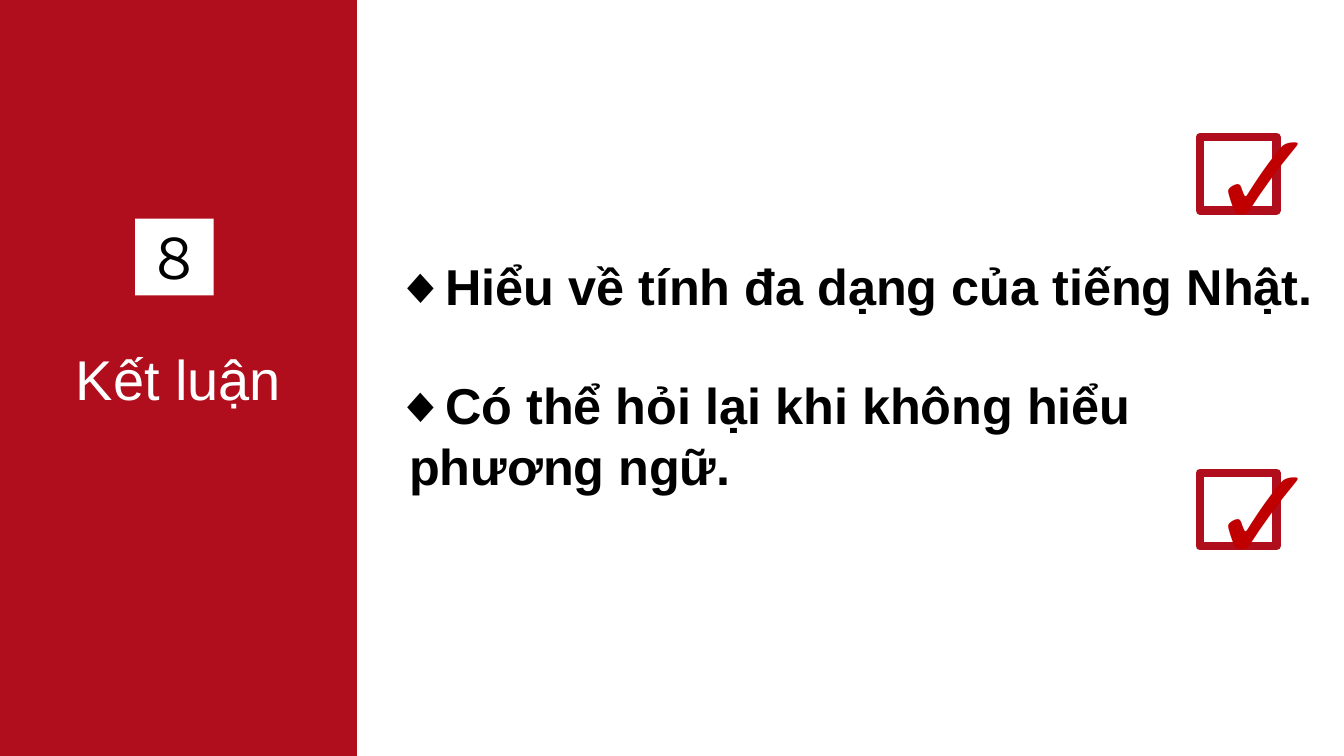
"""Build the conclusion slide with a red side panel and two ticked goals."""
import pptx
import pptx.dml.color
import pptx.enum.shapes
import pptx.enum.text
import pptx.util
from pptx.util import Inches

COLOURS = {"panel": "B00D1D", "tick": "C00000", "ink": "000000", "paper": "FFFFFF"}


def add_rectangle(left, top, width, height, fill, line=None):
    box = page.shapes.add_shape(
        pptx.enum.shapes.MSO_SHAPE.RECTANGLE,
        Inches(left), Inches(top), Inches(width), Inches(height))
    box.shadow.inherit = False
    box.fill.solid()
    box.fill.fore_color.rgb = pptx.dml.color.RGBColor.from_string(COLOURS[fill])
    if line:
        box.line.color.rgb = pptx.dml.color.RGBColor.from_string(COLOURS[line])
        box.line.width = pptx.util.Pt(6)
    else:
        box.line.fill.background()
    return box


def write(box, text, size, colour="ink", bold=False, align="CENTER", before=0, indent=0):
    frame = box.text_frame
    frame.word_wrap = True
    para = frame.add_paragraph() if frame.text else frame.paragraphs[0]
    para.alignment = pptx.enum.text.PP_ALIGN[align]
    if before:
        para.space_before = pptx.util.Pt(before)
    if indent:
        para._p.get_or_add_pPr().set("marL", str(Inches(indent)))
    span = para.add_run()
    span.text = text
    span.font.name = "Arial"
    span.font.size = pptx.util.Pt(size)
    span.font.bold = bold
    span.font.color.rgb = pptx.dml.color.RGBColor.from_string(COLOURS[colour])


deck = pptx.Presentation()
deck.slide_width, deck.slide_height = Inches(13.33), Inches(7.5)
page = deck.slides.add_slide(deck.slide_layouts[6])

goals = page.shapes.add_textbox(Inches(3.82), Inches(2.48), Inches(9.32), Inches(3.13))
for text, before, indent in [
    ("◆Hiểu về tính đa dạng của tiếng Nhật.", 0, 0),
    ("◆Có thể hỏi lại khi không hiểu", 42, 0),
    ("phương ngữ.", 0, 0.14),
]:
    write(goals, text, 36, bold=True, align="LEFT", before=before, indent=indent)

panel = add_rectangle(0, 0, 3.54, 7.5, "panel")
write(panel, "Kết luận", 40, "paper")
number = add_rectangle(1.34, 2.17, 0.78, 0.76, "paper")
write(number, "８", 40)

for top in (1.36, 4.69):
    add_rectangle(11.9, top, 0.76, 0.73, "paper", line="panel")
    tick = page.shapes.add_textbox(
        Inches(11.89), Inches(top - 0.49), Inches(0.93), Inches(1.72))
    write(tick, "✓", 96, "tick", bold=True)

deck.save("out.pptx")
